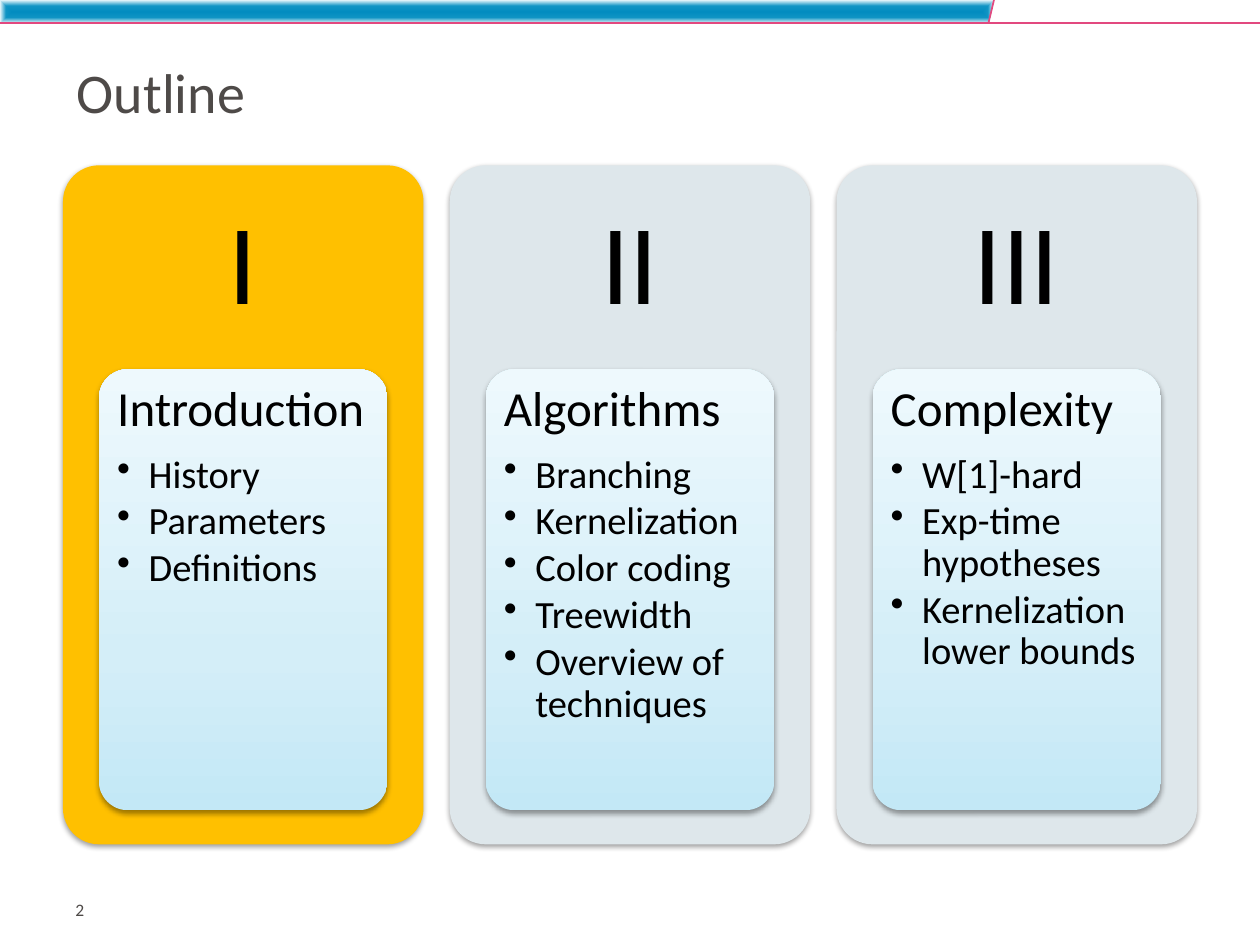
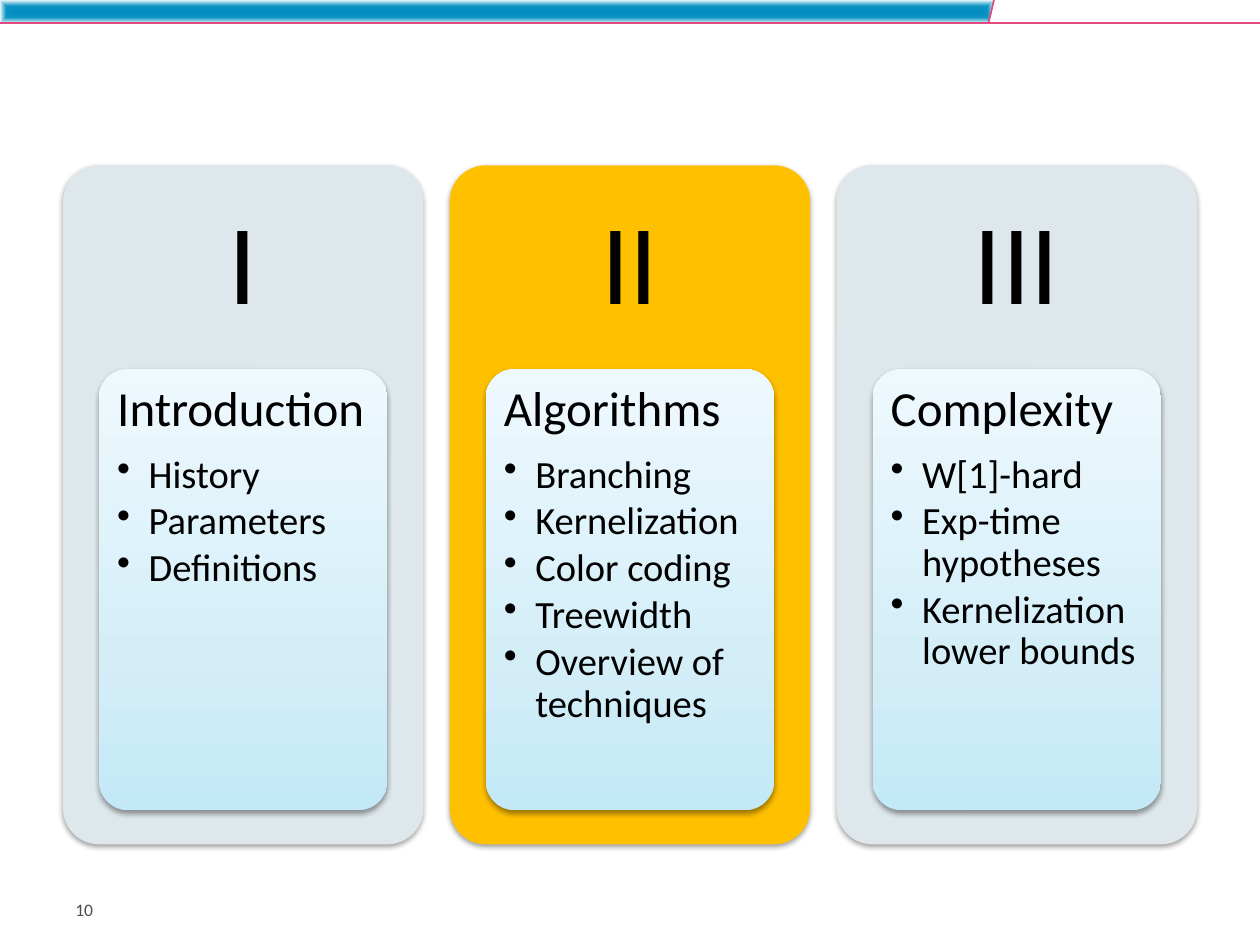
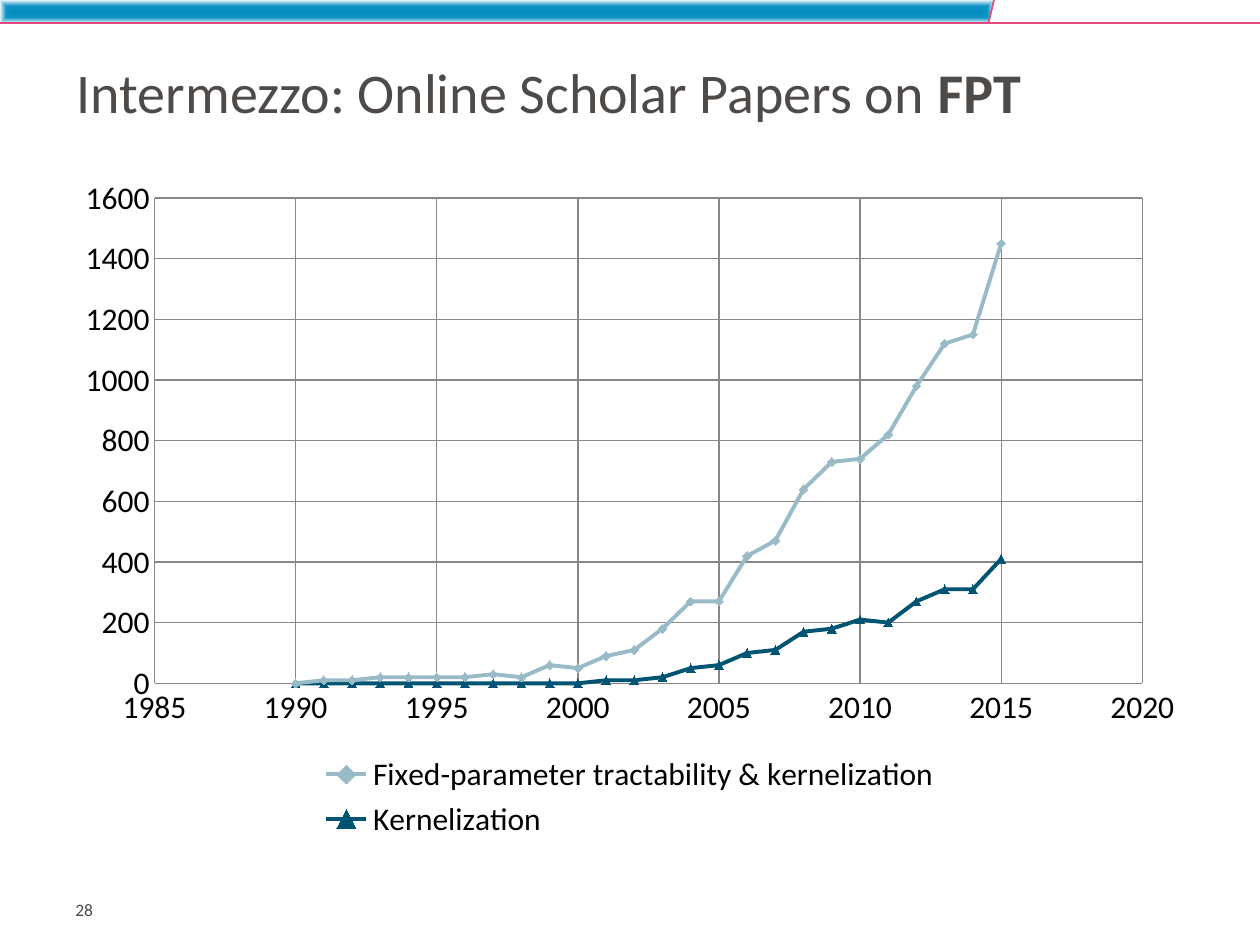
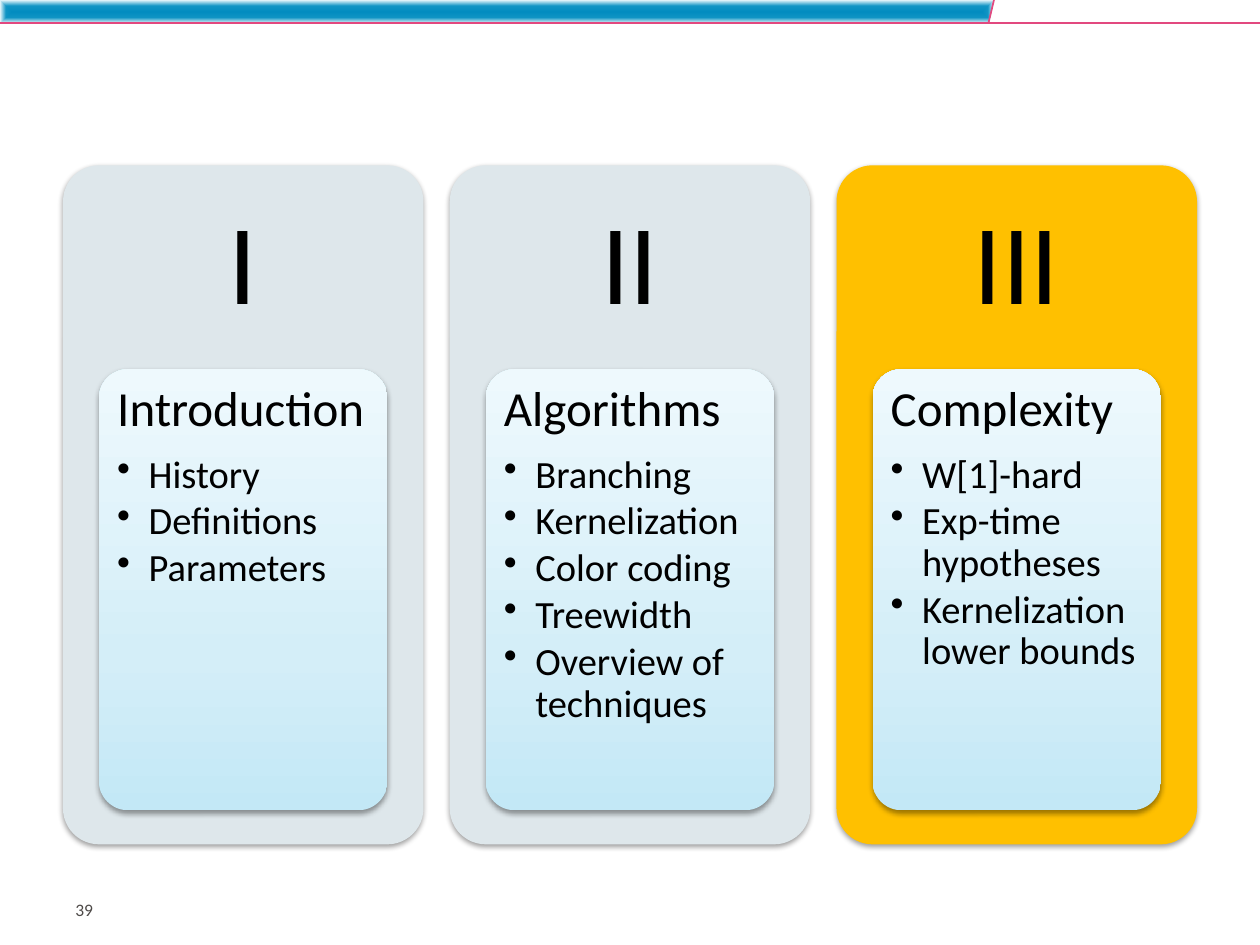
import lxml.etree
import pptx
import pptx.chart.data
import pptx.dml.color
import pptx.enum.chart
import pptx.enum.shapes
import pptx.enum.text
import pptx.oxml
import pptx.oxml.ns
import pptx.util

Pt = pptx.util.Pt
qn = pptx.oxml.ns.qn
ANCHOR = pptx.enum.text.MSO_ANCHOR
FONT = "Calibri"
INK, BLACK, PINK = "4E4A48", "000000", "E2497F"
AMBER, GREY, GRID = "FFC000", "DEE7EB", "878787"
BAND = [(0, "038CC0"), (49, "0F94C4"), (100, "EEF9FD")]
PANEL = [(0, "C3E8F6"), (35, "D4EEF8"), (100, "EEF9FD")]
CENTRE = '<a:path path="shape"><a:fillToRect l="50000" t="50000" r="50000" b="50000"/></a:path>'
UPWARD = '<a:lin ang="16200000" scaled="0"/>'

INTRO = ["History", "Parameters", "Definitions"]
INTRO_LATE = ["History", "Definitions", "Parameters"]
ALGOS = ["Branching", "Kernelization", "Color coding", "Treewidth", "Overview of techniques"]
HARD = ["W[1]-hard", "Exp-time hypotheses", "Kernelization lower bounds"]

YEARS = range(1990, 2016)
PAPERS = [
    ("Fixed-parameter tractability & kernelization", "99BBC7", "DIAMOND",
     [0, 10, 10, 20, 20, 20, 20, 30, 20, 60, 50, 90, 110, 180, 270, 270, 420, 470,
      640, 730, 740, 820, 980, 1120, 1150, 1450]),
    ("Kernelization", "005473", "TRIANGLE",
     [0, 0, 0, 0, 0, 0, 0, 0, 0, 0, 0, 10, 10, 20, 50, 60, 100, 110,
      170, 180, 210, 200, 270, 310, 310, 410]),
]


def rgb(code):
    return pptx.dml.color.RGBColor.from_string(code)


def xml(tag, inner, attrs=""):
    """Parse one drawing element."""
    space = pptx.oxml.ns.nsdecls("a")
    return pptx.oxml.parse_xml(f"<a:{tag} {space} {attrs}>{inner}</a:{tag}>")


def blend(shape, stops, way):
    """Fill a shape with a gradient of (percent, colour) stops."""
    shape.fill.background()
    inner = "".join(f'<a:gs pos="{pos * 1000}"><a:srgbClr val="{code}"/></a:gs>'
                    for pos, code in stops)
    props = shape.element.spPr
    props.replace(props.find(qn("a:noFill")),
                  xml("gradFill", f"<a:gsLst>{inner}</a:gsLst>{way}", 'rotWithShape="1"'))


def style(par, size, color):
    for run in par.runs:
        font = run.font
        font.name, font.size = FONT, Pt(size)
        font.color.rgb = rgb(color)


class Deck:
    def __init__(self):
        self.prs = pptx.Presentation()
        self.prs.slide_width, self.prs.slide_height = Pt(720), Pt(540)
        self.slide = None

    def page(self, number, title="", strong=""):
        """Start a slide with its number and, if given, a title."""
        self.slide = self.prs.slides.add_slide(self.prs.slide_layouts[5 if title else 6])
        if title:
            self.title(title, strong)
        box = self.text(36, 513.5, 154, 21.5, (7.2, 0, 7.2, 3.6))
        par = box.text_frame.paragraphs[0]
        par.text = str(number)
        style(par, 10, INK)

    def title(self, words, strong):
        box = self.slide.shapes.title
        box.left, box.top, box.width, box.height = Pt(36.7), Pt(27.4), Pt(648), Pt(49.7)
        frame = box.text_frame
        frame.vertical_anchor = ANCHOR.MIDDLE
        par = frame.paragraphs[0]
        par.text = words
        par.alignment = pptx.enum.text.PP_ALIGN.LEFT
        if strong:
            run = par.add_run()
            run.text = strong
            run.font.bold = True
        style(par, 32, INK)

    def frame(self):
        """Draw the top band on the current slide and move it to the master."""
        group = self.slide.shapes.add_group_shape()
        edge = group.shapes.build_freeform(0, 0)
        edge.add_line_segments([(Pt(568), 0), (Pt(565), Pt(13.5)), (0, Pt(13.5))])
        band = edge.convert_to_shape()
        band.shadow.inherit = False
        band.line.fill.background()
        blend(band, BAND, CENTRE)
        self.line(group, 568, 0, 564.8, 13.4)
        self.line(group, 720, 13, 0, 13)
        for num, props in enumerate(group.element.iter(qn("p:cNvPr")), 100):
            props.set("id", str(num))
        self.prs.slide_master.shapes.element.append(group.element)

    def line(self, group, *ends):
        kind = pptx.enum.shapes.MSO_CONNECTOR.STRAIGHT
        rule = group.shapes.add_connector(kind, *map(Pt, ends))
        rule.line.color.rgb = rgb(PINK)
        rule.line.width = Pt(1)
        lxml.etree.SubElement(rule.element.spPr, qn("a:effectLst"))

    def text(self, left, top, width, height, pads):
        box = self.slide.shapes.add_textbox(*map(Pt, (left, top, width, height)))
        frame = box.text_frame
        frame.word_wrap = True
        (frame.margin_left, frame.margin_top,
         frame.margin_right, frame.margin_bottom) = map(Pt, pads)
        return box

    def card(self, left, top, width, height):
        """Add a rounded box with a soft shadow."""
        kind = pptx.enum.shapes.MSO_SHAPE.ROUNDED_RECTANGLE
        box = self.slide.shapes.add_shape(kind, *map(Pt, (left, top, width, height)))
        box.adjustments[0] = 0.1
        box.line.fill.background()
        box.shadow.inherit = False
        box.element.spPr.find(qn("a:effectLst")).append(xml(
            "outerShdw", '<a:srgbClr val="000000"><a:alpha val="38000"/></a:srgbClr>',
            f'blurRad="{Pt(3.1)}" dist="{Pt(1.6)}" dir="5400000" rotWithShape="0"'))
        return box

    def column(self, left, mark, head, items, active):
        """Add a numeral above a panel with a list."""
        back = self.card(left, 94.5, 206, 388)
        back.fill.solid()
        back.fill.fore_color.rgb = rgb(AMBER if active else GREY)

        frame = self.text(left, 94.5, 206, 116.5, [19.5] * 4).text_frame
        frame.vertical_anchor = ANCHOR.MIDDLE
        par = frame.paragraphs[0]
        par.text = mark
        par.alignment = pptx.enum.text.PP_ALIGN.CENTER
        par.line_spacing = 0.9
        style(par, 65, BLACK)

        blend(self.card(left + 20.6, 211, 164.8, 252), PANEL, UPWARD)
        box = self.text(left + 25.4, 215.5, 155, 242.5, (5.6, 4.2, 5.6, 4.2))
        box.text_frame.text = "\n".join([head, *items])
        for num, par in enumerate(box.text_frame.paragraphs):
            par.level = 1 if num else 0
            par.line_spacing = 0.9
            par.space_after = Pt(3 if num else 10)
            style(par, 22 if num else 28, BLACK)
        self.bullets(box)

    def bullets(self, box):
        """Put a bullet before each second-level paragraph."""
        for props in box.element.iter(qn("a:pPr")):
            if props.get("lvl") == "1":
                props.set("marL", str(Pt(18)))
                props.set("indent", str(-Pt(18)))
                props.append(xml("buChar", "", 'char="•"'))

    def outline(self, active, intro=INTRO):
        """Add the three columns, one of them lit."""
        rows = [("I", "Introduction", intro), ("II", "Algorithms", ALGOS),
                ("III", "Complexity", HARD)]
        for num, row in enumerate(rows):
            self.column(36 + 221 * num, *row, num == active)

    def chart(self, rows):
        data = pptx.chart.data.XyChartData()
        for name, _, _, counts in rows:
            series = data.add_series(name)
            for year, count in zip(YEARS, counts):
                series.add_data_point(year, count)
        kind = pptx.enum.chart.XL_CHART_TYPE.XY_SCATTER_LINES
        chart = self.slide.shapes.add_chart(
            kind, *map(Pt, (36, 94.5, 648, 388)), data).chart
        chart.has_title = False
        chart.font.name, chart.font.size = FONT, Pt(18)
        chart.font.color.rgb = rgb(BLACK)
        chart.has_legend = True
        chart.legend.position = pptx.enum.chart.XL_LEGEND_POSITION.BOTTOM
        chart.legend.include_in_layout = False
        self.axis(chart.category_axis, 1985, 2020, 5)
        self.axis(chart.value_axis, 0, 1600, 200)
        plot = chart.plots[0]
        plot.vary_by_categories = False
        for series, (_, color, sign, _) in zip(plot.series, rows):
            series.format.line.color.rgb = rgb(color)
            series.format.line.width = Pt(2.25)
            mark = series.marker
            mark.style = pptx.enum.chart.XL_MARKER_STYLE[sign]
            mark.size = 5
            mark.format.fill.solid()
            mark.format.fill.fore_color.rgb = rgb(color)
            mark.format.line.color.rgb = rgb(color)

    def axis(self, axis, low, high, step):
        axis.minimum_scale, axis.maximum_scale, axis.major_unit = low, high, step
        none = pptx.enum.chart.XL_TICK_MARK.NONE
        axis.major_tick_mark = axis.minor_tick_mark = none
        axis.has_major_gridlines = True
        for line in (axis.format.line, axis.major_gridlines.format.line):
            line.color.rgb = rgb(GRID)
            line.width = Pt(0.75)


def main():
    deck = Deck()
    deck.page(2, "Outline")
    deck.frame()
    deck.outline(0)
    deck.page(10)
    deck.outline(1)
    deck.page(28, "Intermezzo: Online Scholar Papers on ", "FPT")
    deck.chart(PAPERS)
    deck.page(39)
    deck.outline(2, INTRO_LATE)
    deck.prs.save("out.pptx")


if __name__ == "__main__":
    main()
